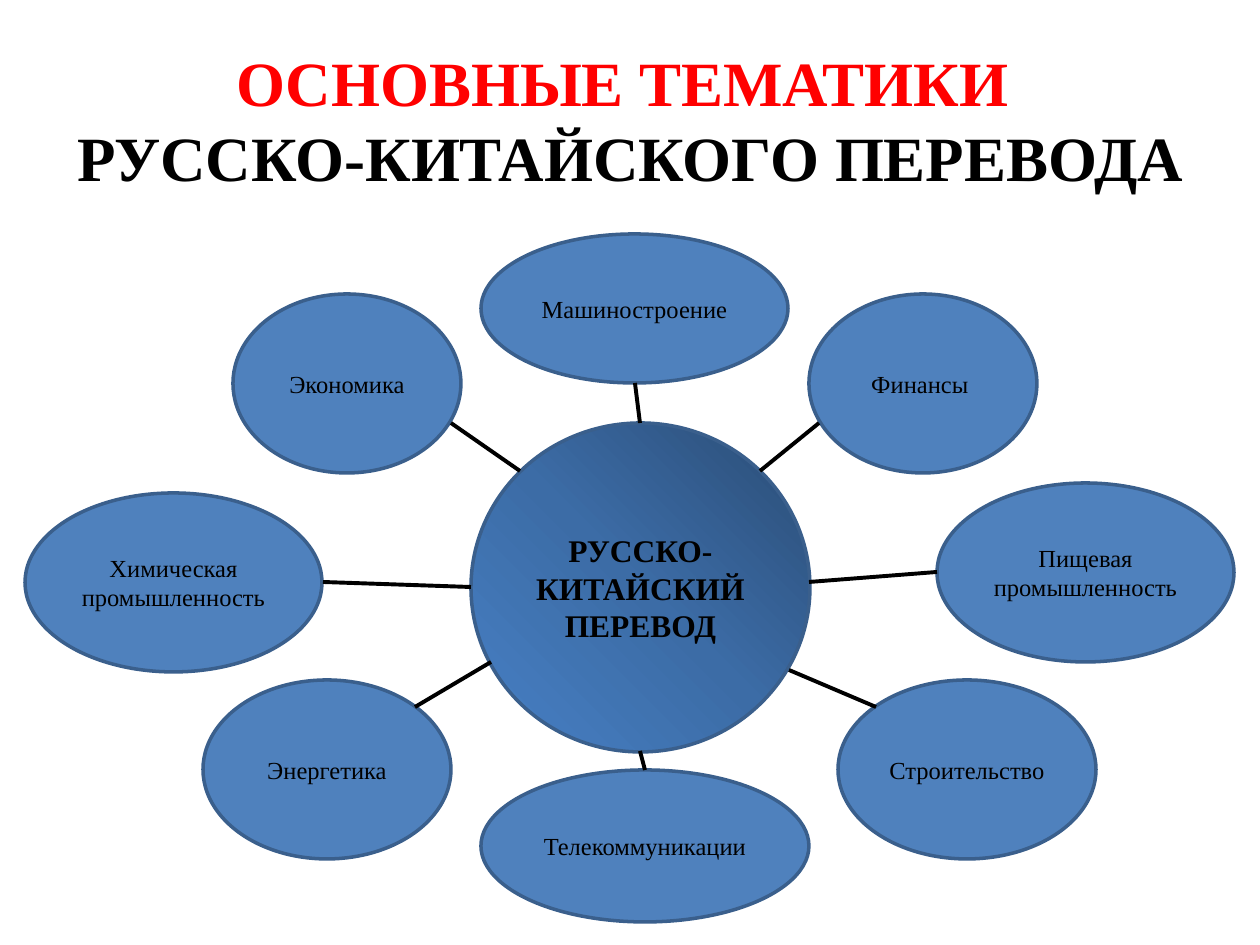
from pptx import Presentation
from pptx.dml.color import RGBColor
from pptx.enum.shapes import MSO_CONNECTOR, MSO_SHAPE
from pptx.enum.text import MSO_ANCHOR, MSO_AUTO_SIZE, PP_ALIGN
from pptx.oxml import parse_xml
from pptx.oxml.ns import nsdecls
from pptx.util import Emu, Pt

PX = 914400 / 126
OVAL, STRAIGHT = MSO_SHAPE.OVAL, MSO_CONNECTOR.STRAIGHT
CENTER, MIDDLE = PP_ALIGN.CENTER, MSO_ANCHOR.MIDDLE
FIT_SHAPE = MSO_AUTO_SIZE.SHAPE_TO_FIT_TEXT

BLACK = RGBColor(0x00, 0x00, 0x00)
RED = RGBColor(0xFF, 0x00, 0x00)
BLUE = RGBColor(0x4F, 0x81, 0xBD)
OUTLINE = RGBColor(0x3A, 0x5F, 0x8C)
HUB_STOPS = (
    (0, RGBColor(0x2A, 0x4C, 0x75)),
    (50, RGBColor(0x3C, 0x6C, 0xA6)),
    (100, RGBColor(0x47, 0x80, 0xC5)),
)

FONT = "Times New Roman"
TITLE_FORMAT = {"name": FONT, "size": Pt(36), "bold": True}
HUB_FORMAT = {"name": FONT, "size": Pt(18), "bold": True}
TOPIC_FORMAT = {"name": FONT, "size": Pt(14), "bold": False}

TITLE_LINES = (
    ("ОСНОВНЫЕ ТЕМАТИКИ ", RED),
    ("РУССКО-КИТАЙСКОГО ПЕРЕВОДА", BLACK),
)
HUB = ("РУССКО-КИТАЙСКИЙ ПЕРЕВОД", (471, 423, 339, 329))
# Topic, ellipse frame, spoke from the topic to the hub
TOPICS = (
    ("Пищевая промышленность", (937, 483, 297, 179), (937, 572, 809, 582)),
    ("Финансы ", (809, 294, 228, 179), (819, 423, 760, 471)),
    ("Машиностроение", (481, 234, 307, 149), (635, 383, 640, 423)),
    ("Строительство", (838, 680, 258, 179), (876, 707, 789, 670)),
    ("Телекоммуникации", (481, 770, 328, 152), (645, 770, 640, 751)),
    ("Энергетика", (203, 680, 248, 179), (415, 707, 491, 662)),
    ("Химическая промышленность", (25, 493, 297, 179), (323, 582, 471, 587)),
    ("Экономика", (233, 294, 228, 179), (451, 423, 520, 471)),
)


def px(*lengths):
    return [Emu(round(length * PX)) for length in lengths]


def write_line(para, text, color, text_format):
    para.alignment = CENTER
    span = para.add_run()
    span.text = text
    for name, value in text_format.items():
        setattr(span.font, name, value)
    span.font.color.rgb = color


def add_title(slide):
    box = slide.shapes.add_textbox(*px(25, 37, 1211, 165))
    frame = box.text_frame
    frame.word_wrap = True
    frame.auto_size = FIT_SHAPE
    for index, (text, color) in enumerate(TITLE_LINES):
        para = frame.add_paragraph() if index else frame.paragraphs[0]
        write_line(para, text, color, TITLE_FORMAT)


def add_ellipse(slide, text, frame, text_format):
    ellipse = slide.shapes.add_shape(OVAL, *px(*frame))
    ellipse.shadow.inherit = False
    ellipse.fill.solid()
    ellipse.fill.fore_color.rgb = BLUE
    ellipse.line.color.rgb = OUTLINE
    ellipse.line.width = Pt(2)
    ellipse.text_frame.word_wrap = True
    ellipse.text_frame.vertical_anchor = MIDDLE
    write_line(ellipse.text_frame.paragraphs[0], text, BLACK, text_format)
    return ellipse


def fill_radial(shape, stops):
    """Fill with a circular gradient that starts in the top right corner."""
    stop_xml = "".join(
        f'<a:gs pos="{percent * 1000}"><a:srgbClr val="{color}"/></a:gs>'
        for percent, color in stops
    )
    gradient = parse_xml(
        f'<a:gradFill {nsdecls("a")} rotWithShape="1"><a:gsLst>{stop_xml}</a:gsLst>'
        '<a:path path="circle"><a:fillToRect l="100000" b="100000"/></a:path>'
        "</a:gradFill>"
    )
    properties = shape.element.spPr
    properties.replace(properties.find(".//{*}solidFill"), gradient)


def add_spoke(slide, ends):
    spoke = slide.shapes.add_connector(STRAIGHT, *px(*ends))
    spoke.line.color.rgb = BLACK
    spoke.line.width = Pt(2.25)
    spoke.element.spPr.append(parse_xml(f'<a:effectLst {nsdecls("a")}/>'))


def main():
    deck = Presentation()
    deck.slide_width, deck.slide_height = px(1260, 945)
    slide = deck.slides.add_slide(deck.slide_layouts[6])

    add_title(slide)
    hub = add_ellipse(slide, *HUB, HUB_FORMAT)
    fill_radial(hub, HUB_STOPS)
    for text, frame, _ in TOPICS:
        add_ellipse(slide, text, frame, TOPIC_FORMAT)
    for _, _, ends in TOPICS:
        add_spoke(slide, ends)

    deck.save("out.pptx")


if __name__ == "__main__":
    main()
